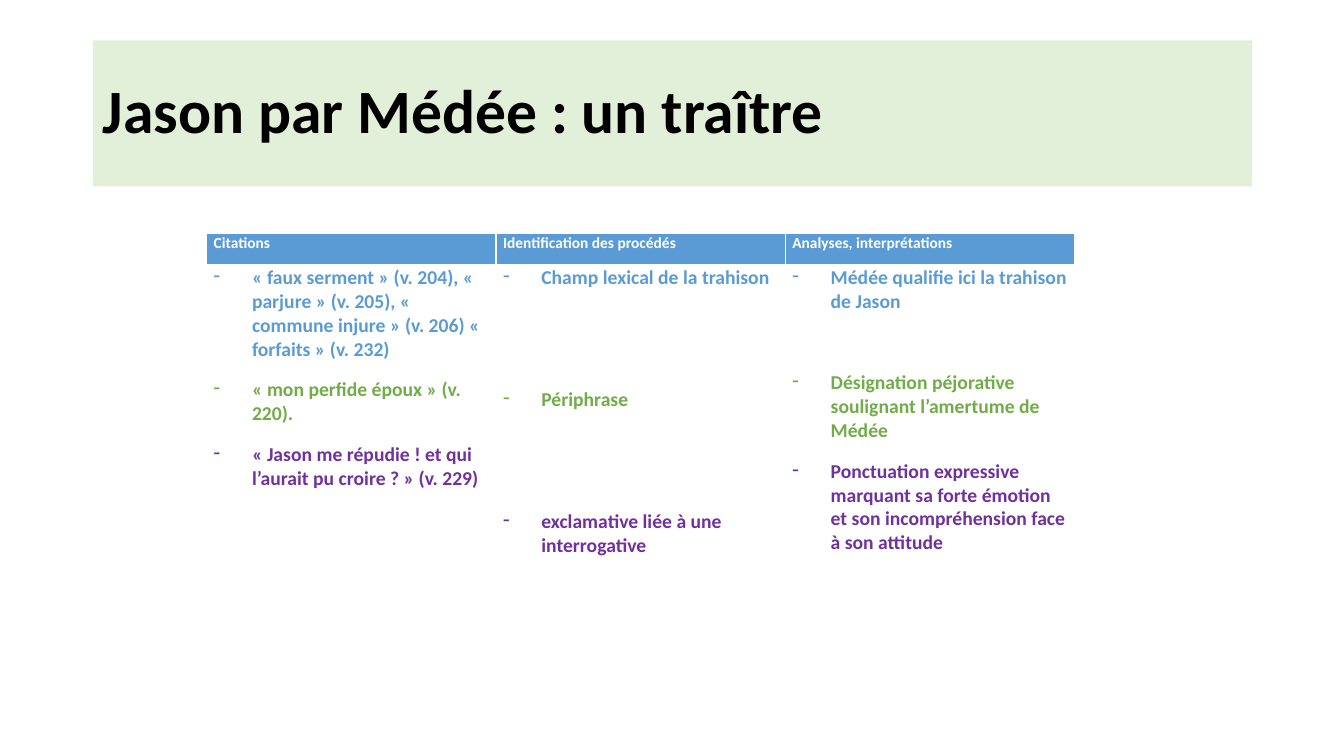
"""Build the slide on Jason as seen by Médée."""
from dataclasses import dataclass

from lxml import etree
from pptx import Presentation, util as u
from pptx.dml.color import RGBColor
from pptx.enum import text
from pptx.oxml.ns import qn


@dataclass(frozen=True)
class Theme:
    font: str = "Calibri"
    black: str = "000000"
    white: str = "FFFFFF"
    banner: str = "E2F0D9"
    blue: str = "5B9BD5"
    green: str = "70AD47"
    purple: str = "7030A0"
    title_size: int = 44
    header_size: int = 11
    body_size: int = 14
    paragraph_gap: int = 12
    thin: int = 1
    thick: int = 3


@dataclass(frozen=True)
class Point:
    wording: str
    color: str
    before: int = 0


@dataclass(frozen=True)
class Column:
    heading: str
    points: tuple[Point, ...]


THEME = Theme()
COLUMNS = (
    Column("Citations", (
        Point("« faux serment » (v. 204), « parjure » (v. 205), « commune injure » (v. 206) « forfaits » (v. 232)",
              THEME.blue),
        Point("« mon perfide époux » (v. 220).", THEME.green),
        Point("« Jason me répudie ! et qui l’aurait pu croire ? » (v. 229)", THEME.purple),
    )),
    Column("Identification des procédés", (
        Point("Champ lexical de la trahison", THEME.blue),
        Point("Périphrase", THEME.green, before=58),
        Point("exclamative liée à une interrogative", THEME.purple, before=58),
    )),
    Column("Analyses, interprétations", (
        Point("Médée qualifie ici la trahison de Jason", THEME.blue),
        Point("Désignation péjorative soulignant l’amertume de Médée", THEME.green, before=29),
        Point("Ponctuation expressive marquant sa forte émotion et son incompréhension face à son attitude",
              THEME.purple),
    )),
)


def write(paragraph, wording: str, *, size: int, color: str, before: int = 0,
          after: int = 0, spacing: float = 1.0, dash: bool = False) -> None:
    """Fill a paragraph with bold, left-aligned text."""
    paragraph.alignment = text.PP_ALIGN.LEFT
    paragraph.space_before, paragraph.space_after = u.Pt(before), u.Pt(after)
    paragraph.line_spacing = spacing
    run = paragraph.add_run()
    run.text = wording
    run.font.name, run.font.size, run.font.bold = THEME.font, u.Pt(size), True
    run.font.color.rgb = RGBColor.from_string(color)
    if dash:
        properties = paragraph._p.get_or_add_pPr()
        indent = u.Inches(0.38)
        properties.set("marL", str(indent))
        properties.set("indent", str(-indent))
        etree.SubElement(properties, qn("a:buChar"), char="-")


def paint(target, color: str) -> None:
    """Give a shape or cell a solid fill."""
    target.fill.solid()
    target.fill.fore_color.rgb = RGBColor.from_string(color)


def format_cell(cell, *, top: int, bottom: int) -> None:
    """Set the margins and white borders of a cell."""
    cell.margin_left = cell.margin_right = u.Inches(0.07)
    cell.margin_top = cell.margin_bottom = 0
    cell.vertical_anchor = text.MSO_ANCHOR.TOP
    properties = cell._tc.get_or_add_tcPr()
    widths = {"lnL": THEME.thin, "lnR": THEME.thin, "lnT": top, "lnB": bottom}
    for position, (side, width) in enumerate(widths.items()):
        border = etree.Element(qn(f"a:{side}"), w=str(u.Pt(width)))
        fill = etree.SubElement(border, qn("a:solidFill"))
        etree.SubElement(fill, qn("a:srgbClr"), val=THEME.white)
        properties.insert(position, border)


def add_title(slide) -> None:
    """Place the title on its green banner."""
    title = slide.shapes.title
    title.left, title.top = u.Inches(0.92), u.Inches(0.4)
    title.width, title.height = u.Inches(11.5), u.Inches(1.45)
    paint(title, THEME.banner)
    frame = title.text_frame
    frame.auto_size = text.MSO_AUTO_SIZE.NONE
    frame.vertical_anchor = text.MSO_ANCHOR.MIDDLE
    write(frame.paragraphs[0], "Jason par Médée : un traître", size=THEME.title_size,
          color=THEME.black, spacing=0.9)


def fill_column(heading_cell, points_cell, column: Column) -> None:
    """Write one heading and its coloured points."""
    paint(heading_cell, THEME.blue)
    format_cell(heading_cell, top=THEME.thin, bottom=THEME.thick)
    write(heading_cell.text_frame.paragraphs[0], column.heading, size=THEME.header_size,
          color=THEME.white, after=THEME.paragraph_gap)
    points_cell.fill.background()
    format_cell(points_cell, top=THEME.thick, bottom=THEME.thin)
    frame = points_cell.text_frame
    for index, point in enumerate(column.points):
        paragraph = frame.add_paragraph() if index else frame.paragraphs[0]
        write(paragraph, point.wording, size=THEME.body_size, color=point.color,
              before=point.before, after=THEME.paragraph_gap, dash=True)


def add_analysis(slide) -> None:
    """Lay out the table of quotations, devices and readings."""
    analysis = slide.shapes.add_table(2, len(COLUMNS), u.Inches(2.05), u.Inches(2.32),
                                      u.Inches(8.6), u.Inches(4.12)).table
    analysis.horz_banding = False
    for row, height in zip(analysis.rows, (0.32, 3.8)):
        row.height = u.Inches(height)
    for index, column in enumerate(COLUMNS):
        analysis.columns[index].width = u.Inches(2.87)
        fill_column(analysis.cell(0, index), analysis.cell(1, index), column)


def main() -> None:
    """Create and save the presentation."""
    presentation = Presentation()
    presentation.slide_width, presentation.slide_height = u.Inches(13.33), u.Inches(7.5)
    slide = presentation.slides.add_slide(presentation.slide_layouts.get_by_name("Title Only"))
    add_title(slide)
    add_analysis(slide)
    presentation.save("out.pptx")


if __name__ == "__main__":
    main()
